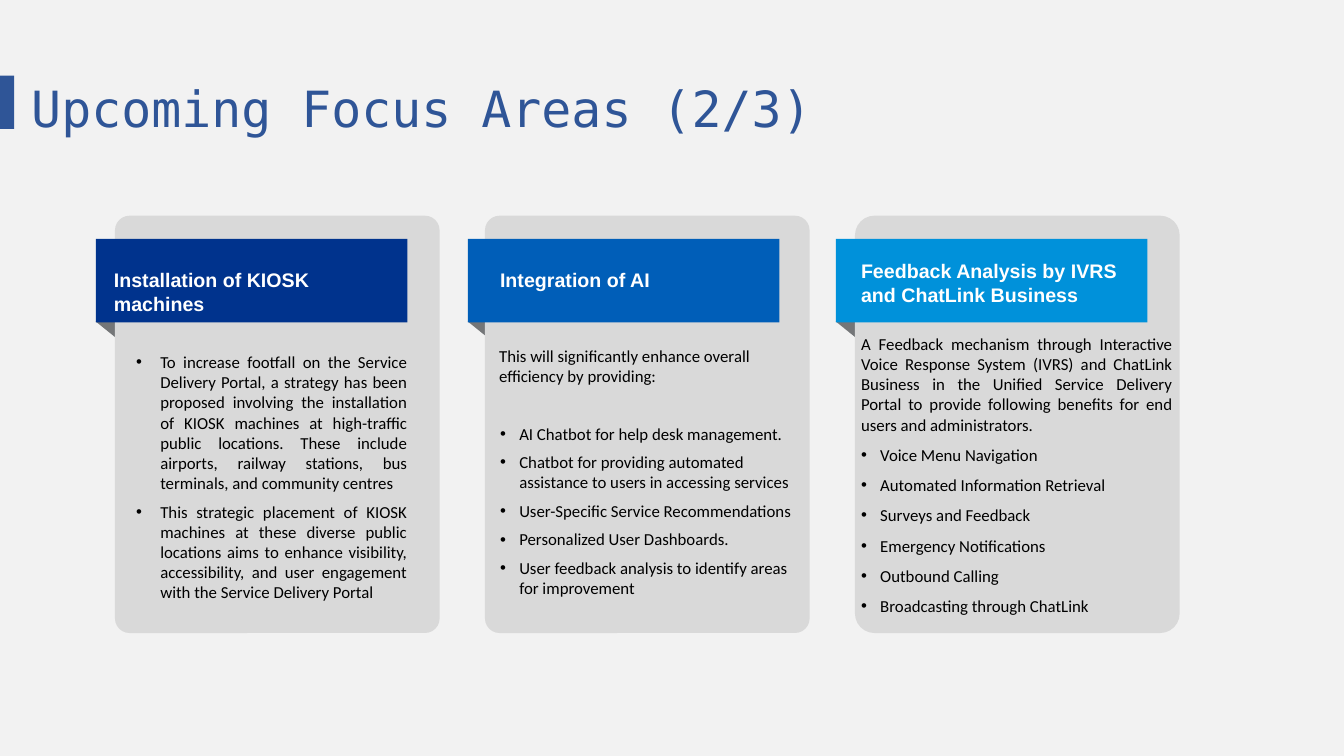
from dataclasses import dataclass

from lxml.etree import SubElement
from pptx import Presentation
from pptx.dml.color import RGBColor
from pptx.enum.shapes import MSO_SHAPE as Shape
from pptx.enum.text import PP_ALIGN as Align
from pptx.oxml.ns import qn
from pptx.util import Inches, Pt

PAGE = RGBColor(0xF2, 0xF2, 0xF2)
TITLE_BLUE = RGBColor(0x2F, 0x55, 0x97)
CARD_GREY = RGBColor(0xD9, 0xD9, 0xD9)
FOLD_GREY = RGBColor(0x74, 0x76, 0x78)
NAVY = RGBColor(0x00, 0x33, 0x8D)
BLUE = RGBColor(0x00, 0x5E, 0xB8)
SKY = RGBColor(0x00, 0x91, 0xDA)
WHITE = RGBColor(0xFF, 0xFF, 0xFF)
BLACK = RGBColor(0x00, 0x00, 0x00)

CARD_LEFT, CARD_TOP, CARD_PITCH = 1.14, 2.14, 3.67
CARD_WIDTH, CARD_HEIGHT = 3.22, 4.14
BANNER_WIDTH, BANNER_HEIGHT = 3.09, 0.83
FOLD_OUTLINE = [(0.17, 0.59), (0, 0.82), (0.63, 1.33), (0.8, 1.1)]


@dataclass
class FocusArea:
    """Wording and layout of one card, with offsets from the card's corner."""

    heading: str
    bullets: list
    colour: RGBColor
    banner_dx: float
    heading_at: tuple
    body_box: tuple
    bullet_indent: tuple
    intro: str = ""
    intro_after: float = 0
    align: Align = Align.LEFT
    bullet_align: Align = Align.LEFT
    line_spacing: float = 1.0
    space_after: float = 6
    corner: float = 0.045


AREAS = [
    FocusArea(
        "Installation of KIOSK machines",
        ["To increase footfall on the Service Delivery Portal, a strategy has been "
         "proposed involving the installation of KIOSK machines at high-traffic public "
         "locations. These include airports, railway stations, bus terminals, and "
         "community centres",
         "This strategic placement of KIOSK machines at these diverse public locations "
         "aims to enhance visibility, accessibility, and user engagement with the "
         "Service Delivery Portal"],
        NAVY, -0.19, (-0.01, 0.52), (0.19, 1.35, 2.71, 2.79), (0.26, 0.24),
        bullet_align=Align.JUSTIFY),
    FocusArea(
        "Integration of AI",
        ["AI Chatbot for help desk management.",
         "Chatbot for providing automated assistance to users in accessing services",
         "User-Specific Service Recommendations",
         "Personalized User Dashboards.",
         "User feedback analysis to identify areas for improvement"],
        BLUE, -0.17, (0.15, 0.52), (0.14, 1.29, 3.08, 2.52), (0.2, 0.19),
        intro="This will significantly enhance overall efficiency by providing:",
        intro_after=26.6),
    FocusArea(
        "Feedback Analysis by IVRS and ChatLink Business",
        ["Voice Menu Navigation", "Automated Information Retrieval",
         "Surveys and Feedback", "Emergency Notifications", "Outbound Calling",
         "Broadcasting through ChatLink"],
        SKY, -0.19, (0.06, 0.43), (0.06, 1.17, 3.09, 2.79), (0.19, 0.19),
        intro="A Feedback mechanism through Interactive Voice Response System (IVRS) and "
              "ChatLink Business in the Unified Service Delivery Portal to provide "
              "following benefits for end users and administrators.",
        align=Align.JUSTIFY, line_spacing=1.5, space_after=0, corner=0.06),
]


def paint(shape, colour):
    """Give a shape a plain fill without line or shadow."""
    shape.shadow.inherit = False
    shape.fill.solid()
    shape.fill.fore_color.rgb = colour
    shape.line.fill.background()


def add_block(slide, kind, left, top, width, height, colour):
    """Add a plain filled preset shape."""
    block = slide.shapes.add_shape(
        kind, Inches(left), Inches(top), Inches(width), Inches(height))
    paint(block, colour)
    return block


def add_frame(slide, left, top, width, height):
    """Add a wrapping text box without margins and return its text frame."""
    frame = slide.shapes.add_textbox(
        Inches(left), Inches(top), Inches(width), Inches(height)).text_frame
    frame.word_wrap = True
    frame.margin_left = frame.margin_top = frame.margin_right = frame.margin_bottom = 0
    return frame


def write(paragraph, text, font, size, colour, bold=False):
    """Add one formatted run to a paragraph."""
    run = paragraph.add_run()
    run.text = text
    run.font.name = font
    run.font.size = Pt(size)
    run.font.bold = bold
    run.font.color.rgb = colour


def add_bullet(paragraph, margin, hanging):
    """Give a paragraph a hanging round bullet."""
    properties = paragraph._p.get_or_add_pPr()
    properties.set("marL", str(Inches(margin)))
    properties.set("indent", str(-Inches(hanging)))
    SubElement(properties, qn("a:buFont"), typeface="Arial")
    SubElement(properties, qn("a:buChar"), char="•")


def add_title(slide, left, top):
    """Place the slide title with its accent bar at the page edge."""
    add_block(slide, Shape.RECTANGLE, left, top, 0.14, 0.53, TITLE_BLUE)
    title = add_frame(slide, left + 0.31, top + 0.02, 12.68, 0.58).paragraphs[0]
    title.line_spacing = Pt(42.8)
    write(title, "Upcoming Focus Areas (2/3)", "DejaVu Sans Mono", 35.6, TITLE_BLUE)


def add_body(slide, area, left, top):
    """Write the introduction and bullets of one card."""
    dx, dy, width, height = area.body_box
    frame = add_frame(slide, left + dx, top + dy, width, height)
    paragraph = frame.paragraphs[0]
    if area.intro:
        paragraph.alignment = area.align
        paragraph.space_after = Pt(area.intro_after)
        write(paragraph, area.intro, "Calibri", 12, BLACK)
    for index, bullet in enumerate(area.bullets):
        if index or area.intro:
            paragraph = frame.add_paragraph()
        add_bullet(paragraph, *area.bullet_indent)
        paragraph.alignment = area.bullet_align
        paragraph.line_spacing = area.line_spacing
        paragraph.space_after = Pt(area.space_after)
        write(paragraph, bullet, "Calibri", 12, BLACK)


def add_card(slide, area, left, top):
    """Build one card with its folded banner, heading and body."""
    banner_left, banner_top = left + area.banner_dx, top + 0.23
    corners = [(Inches(banner_left + x), Inches(banner_top + y)) for x, y in FOLD_OUTLINE]
    fold = slide.shapes.build_freeform(*corners[0])
    fold.add_line_segments(corners[1:], close=True)
    paint(fold.convert_to_shape(), FOLD_GREY)

    card = add_block(slide, Shape.ROUNDED_RECTANGLE, left, top,
                     CARD_WIDTH, CARD_HEIGHT, CARD_GREY)
    card.adjustments[0] = area.corner
    add_body(slide, area, left, top)
    add_block(slide, Shape.RECTANGLE, banner_left, banner_top,
              BANNER_WIDTH, BANNER_HEIGHT, area.colour)
    dx, dy = area.heading_at
    heading = add_frame(slide, left + dx, top + dy, 2.74, 0.44).paragraphs[0]
    write(heading, area.heading, "Arial", 14, WHITE, bold=True)


def main():
    """Build the focus areas slide and save it."""
    deck = Presentation()
    deck.slide_width, deck.slide_height = Inches(13.33), Inches(7.5)
    slide = deck.slides.add_slide(deck.slide_layouts[6])
    slide.background.fill.solid()
    slide.background.fill.fore_color.rgb = PAGE
    add_title(slide, 0, 0.75)
    for column, area in enumerate(AREAS):
        add_card(slide, area, CARD_LEFT + column * CARD_PITCH, CARD_TOP)
    deck.save("out.pptx")


if __name__ == "__main__":
    main()
